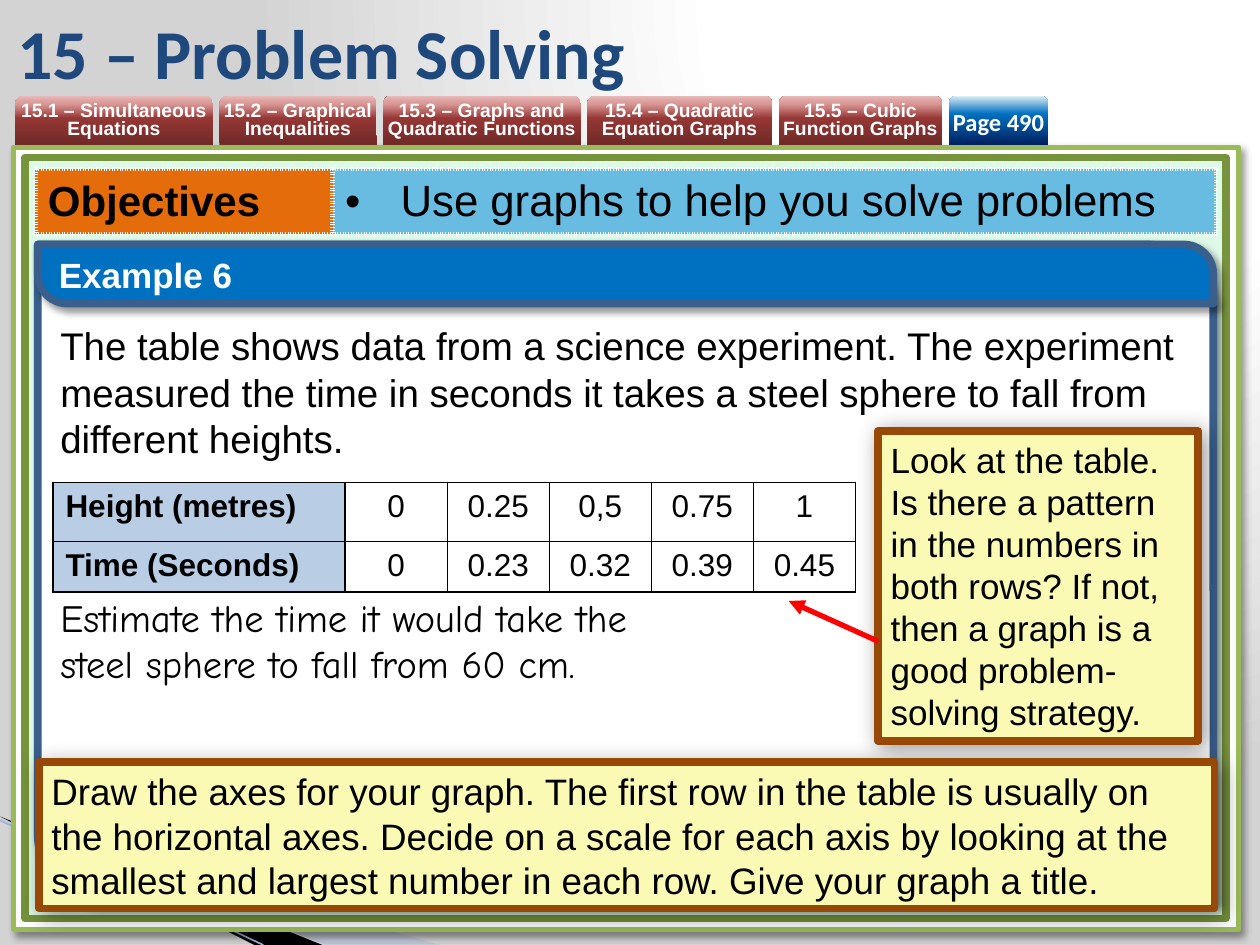
from lxml import etree
from pptx import Presentation
from pptx.dml.color import RGBColor
from pptx.enum.shapes import MSO_CONNECTOR, MSO_SHAPE
from pptx.enum.text import MSO_ANCHOR, PP_ALIGN
from pptx.oxml import parse_xml
from pptx.oxml.ns import nsdecls, qn
from pptx.util import Inches, Pt

COLORS = {
    "white": "FFFFFF", "black": "000000", "grey": "D3D3D3", "title": "1F497D",
    "sweep": "A7B9DB", "sweep_line": "9EB3D6", "lime": "9BBB59", "olive": "77933C",
    "mint": "DFF9E8", "orange": "E46C0A", "sky": "68BCE1", "blue": "0070C0",
    "navy": "3A5F8C", "note": "FAFAB4", "brown": "984807", "header": "B9CDE5",
    "red": "FF0000",
}
TAB_STOPS = [(0, "6F2927"), (54, "953735"), (83, "D99694"), (100, "E6B9B8")]
PAGE_STOPS = [(0, "002060"), (63, "0070C0"), (100, "DBEEF4")]
UPWARD = '<a:lin ang="16200000" scaled="0"/>'
GLOW = '<a:path path="circle"><a:fillToRect l="65000" t="0" r="0" b="98000"/></a:path>'


def rgb(name):
    return RGBColor.from_string(COLORS[name])


def inches(*values):
    return [Inches(v) for v in values]


def set_gradient(fill, parent, stops, direction):
    fill.solid()
    fill.fore_color.rgb = rgb("white")
    gs = "".join(f'<a:gs pos="{pos * 1000}"><a:srgbClr val="{c}"/></a:gs>' for pos, c in stops)
    grad = parse_xml(f'<a:gradFill {nsdecls("a")} rotWithShape="1">'
                     f'<a:gsLst>{gs}</a:gsLst>{direction}</a:gradFill>')
    parent.replace(parent.find(qn("a:solidFill")), grad)


def add_shadow(sp, blur):
    sp._element.spPr.find(qn("a:effectLst")).append(parse_xml(
        f'<a:outerShdw {nsdecls("a")} blurRad="{Pt(blur)}" dist="{Pt(3)}" dir="2700000" '
        f'algn="tl" rotWithShape="0"><a:srgbClr val="{COLORS["black"]}">'
        '<a:alpha val="40000"/></a:srgbClr></a:outerShdw>'))


def add_run(p, text, size, color="black", bold=False, font="Arial"):
    r = p.add_run()
    r.text = text
    r.font.size, r.font.bold, r.font.name = Pt(size), bold, font
    r.font.color.rgb = rgb(color)


def add_box(slide, box, fill=None, line=None, width=4.33, kind=MSO_SHAPE.RECTANGLE, blur=None):
    sp = slide.shapes.add_shape(kind, *inches(*box))
    sp.shadow.inherit = False
    if fill:
        sp.fill.solid()
        sp.fill.fore_color.rgb = rgb(fill)
    if line:
        sp.line.color.rgb = rgb(line)
        sp.line.width = Pt(width)
    else:
        sp.line.fill.background()
    if blur:
        add_shadow(sp, blur)
    tf = sp.text_frame
    tf.word_wrap = True
    tf.vertical_anchor = MSO_ANCHOR.MIDDLE
    tf.paragraphs[0].alignment = PP_ALIGN.LEFT
    return sp


def add_line(slide, start, end, color, width, arrow=False):
    cx = slide.shapes.add_connector(MSO_CONNECTOR.STRAIGHT, *inches(*start, *end))
    cx.line.color.rgb = rgb(color)
    cx.line.width = Pt(width)
    if arrow:
        etree.SubElement(cx.line._get_or_add_ln(), qn("a:tailEnd"), type="triangle")
    etree.SubElement(cx._element.spPr, qn("a:effectLst"))


def add_textbox(slide, box, anchor=MSO_ANCHOR.TOP):
    tf = slide.shapes.add_textbox(*inches(*box)).text_frame
    tf.word_wrap = True
    tf.vertical_anchor = anchor
    return tf


def add_grid(slide, box, cols, rows):
    frame = slide.shapes.add_table(len(rows), len(cols), *inches(*box))
    table = frame.table
    table.first_row = table.horz_banding = False
    for col, width in zip(table.columns, cols):
        col.width = Inches(width)
    for row, height in zip(table.rows, rows):
        row.height = Inches(height)
    return table


def style_cell(cell, fill, border, width, dash="solid"):
    if fill:
        cell.fill.solid()
        cell.fill.fore_color.rgb = rgb(fill)
    else:
        cell.fill.background()
    tc_pr = cell._tc.get_or_add_tcPr()
    for i, side in enumerate("LRTB"):
        tc_pr.insert(i, parse_xml(
            f'<a:ln{side} {nsdecls("a")} w="{Pt(width)}"><a:solidFill><a:srgbClr '
            f'val="{COLORS[border]}"/></a:solidFill><a:prstDash val="{dash}"/></a:ln{side}>'))


def add_backdrop(slide):
    bg_fill = slide.background.fill
    bg_fill.solid()
    set_gradient(bg_fill, slide.element.find(".//" + qn("p:bgPr")),
                 [(0, COLORS["white"]), (40, COLORS["white"]), (100, COLORS["grey"])], GLOW)
    # Corner sweeps
    for color, points in (("sweep", [(0, 6.5), (3.49, 7.5), (2.59, 7.5)]),
                          ("black", [(0, 6.48), (2.56, 7.5), (2.02, 7.5)])):
        builder = slide.shapes.build_freeform(*inches(*points[0]), scale=1.0)
        builder.add_line_segments([inches(*pt) for pt in points[1:]], close=True)
        sp = builder.convert_to_shape()
        sp.shadow.inherit = False
        sp.fill.solid()
        sp.fill.fore_color.rgb = rgb(color)
        sp.line.fill.background()
        if color == "sweep":
            clr = sp._element.spPr.find(".//" + qn("a:srgbClr"))
            etree.SubElement(clr, qn("a:alpha"), val="40000")
    add_line(slide, (0, 6.51), (2.09, 7.5), "sweep_line", 0.95)
    # Double frame
    add_box(slide, (0.11, 1.17, 9.72, 6.21), "white", "lime", 3, blur=4)
    add_box(slide, (0.2, 1.25, 9.53, 6.04), "mint", "olive")


def add_tabs(slide, x, y, h, gap=0.05):
    tabs = [("15.1 – Simultaneous Equations", 1.57), ("15.2 – Graphical Inequalities", 1.25),
            ("15.3 – Graphs and Quadratic Functions", 1.57),
            ("15.4 – Quadratic Equation Graphs", 1.47),
            ("15.5 – Cubic Function Graphs", 1.3), ("Page 490", 0.79)]
    for label, w in tabs:
        is_page = label.startswith("Page")
        sp = add_box(slide, (x, y, w, h), kind=MSO_SHAPE.ROUND_2_SAME_RECTANGLE)
        set_gradient(sp.fill, sp._element.spPr, PAGE_STOPS if is_page else TAB_STOPS, UPWARD)
        tf = sp.text_frame
        tf.margin_left = tf.margin_right = tf.margin_top = tf.margin_bottom = 0
        p = tf.paragraphs[0]
        p.alignment = PP_ALIGN.CENTER
        if is_page:
            add_run(p, label, 14, "white", True, "Calibri")
        else:
            p.line_spacing = Pt(10)
            add_run(p, label, 11, "white", True)
        x += w + gap


def add_objectives(slide, box):
    table = add_grid(slide, box, [2.36, 7.01], [0.45])
    for cell, fill in zip(table.rows[0].cells, ("orange", "sky")):
        style_cell(cell, fill, "white", 3, "sysDot")
        cell.vertical_anchor = MSO_ANCHOR.MIDDLE
    add_run(table.cell(0, 0).text_frame.paragraphs[0], "Objectives", 24, bold=True)
    p = table.cell(0, 1).text_frame.paragraphs[0]
    p_pr = p._p.get_or_add_pPr()
    p_pr.set("marL", str(Inches(0.44)))
    p_pr.set("indent", str(-Inches(0.44)))
    etree.SubElement(p_pr, qn("a:buFont"), typeface="Arial")
    etree.SubElement(p_pr, qn("a:buChar"), char="•")
    add_run(p, "Use graphs to help you solve problems", 25)


def add_example(slide, box):
    x, y, w, h = box
    # Card and its heading band
    for height, fill, curve in ((h, "white", 0.1), (0.47, "blue", 0.5)):
        sp = add_box(slide, (x, y, w, height), fill, "navy",
                     kind=MSO_SHAPE.ROUND_2_DIAG_RECTANGLE, blur=4)
        sp.adjustments[0], sp.adjustments[1] = 0, curve
    add_run(sp.text_frame.paragraphs[0], "Example 6", 20, "white", True)
    # Problem text, leaving room for the data table
    tf = add_textbox(slide, (x + 0.08, y + 0.57, 9.22, 3.06))
    add_run(tf.paragraphs[0], "The table shows data from a science experiment. The experiment "
            "measured the time in seconds it takes a steel sphere to fall from different "
            "heights.", 22)
    p = tf.add_paragraph()
    p.space_before = Pt(76)
    add_run(p, "Estimate the time it would take the ", 22, font="Comic Neue")
    p.add_line_break()
    add_run(p, "steel sphere to fall from 60 cm.", 22, font="Comic Neue")


def add_note(slide, box, text, size):
    sp = add_box(slide, box, "note", "brown", blur=13)
    add_run(sp.text_frame.paragraphs[0], text, size)


def add_data_table(slide, box):
    data = [["Height (metres)", "0", "0.25", "0,5", "0.75", "1"],
            ["Time (Seconds)", "0", "0.23", "0.32", "0.39", "0.45"]]
    table = add_grid(slide, box, [2.32] + [0.81] * 5, [0.47, 0.37])
    for row, values in zip(table.rows, data):
        for i, (cell, value) in enumerate(zip(row.cells, values)):
            style_cell(cell, None if i else "header", "black", 1)
            p = cell.text_frame.paragraphs[0]
            p.alignment = PP_ALIGN.CENTER if i else PP_ALIGN.LEFT
            add_run(p, value, 18, bold=i == 0)


def main():
    prs = Presentation()
    prs.slide_width, prs.slide_height = inches(10, 7.5)
    slide = prs.slides.add_slide(prs.slide_layouts[6])
    add_backdrop(slide)
    add_tabs(slide, 0.12, 0.76, 0.39)
    title = add_textbox(slide, (0.04, 0.05, 8.27, 0.71), MSO_ANCHOR.MIDDLE)
    add_run(title.paragraphs[0], "15 – Problem Solving", 40, "title", True, "Calibri")
    add_objectives(slide, (0.28, 1.34, 9.37, 0.45))
    add_example(slide, (0.3, 1.94, 9.33, 5.21))
    # Hints
    add_note(slide, (6.97, 3.42, 2.54, 2.46), "Look at the table. Is there a pattern in the "
             "numbers in both rows? If not, then a graph is a good problem-solving strategy.", 20)
    add_line(slide, (6.97, 5.09), (6.26, 4.77), "red", 3, arrow=True)
    add_note(slide, (0.31, 6.05, 9.33, 1.16), "Draw the axes for your graph. The first row in "
             "the table is usually on the horizontal axes. Decide on a scale for each axis by "
             "looking at the smallest and largest number in each row. Give your graph a title.", 21)
    add_data_table(slide, (0.42, 3.83, 6.37, 0.84))
    prs.save("out.pptx")


if __name__ == "__main__":
    main()
